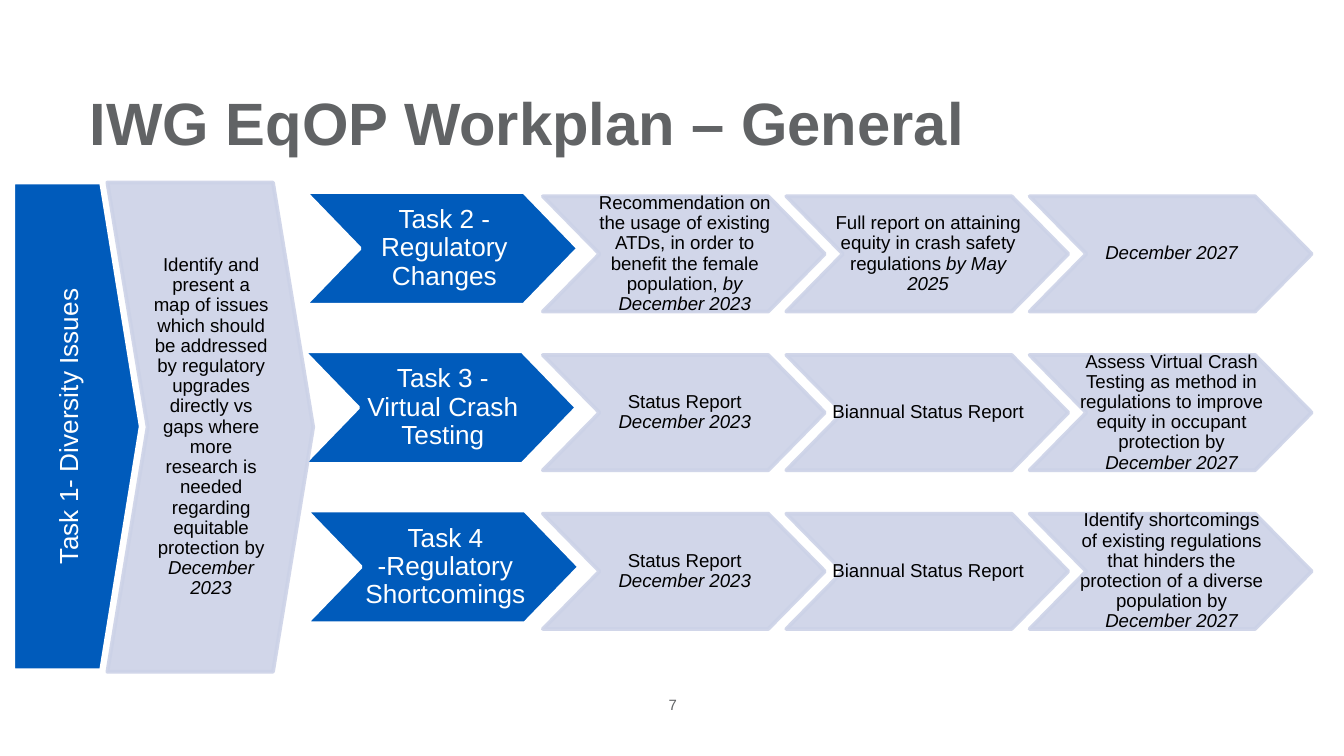
from lxml import etree
from pptx import Presentation
from pptx.dml.color import RGBColor
from pptx.enum.shapes import MSO_SHAPE
from pptx.enum.text import MSO_ANCHOR, PP_ALIGN
from pptx.oxml.ns import qn
from pptx.util import Cm, Pt

BLUE = RGBColor(0x00, 0x5B, 0xBB)
LAVENDER = RGBColor(0xCC, 0xD2, 0xE7)
GREY = RGBColor(0x61, 0x63, 0x65)
WHITE = RGBColor(0xFF, 0xFF, 0xFF)
BLACK = RGBColor(0x00, 0x00, 0x00)
PENTAGON = MSO_SHAPE.PENTAGON
MIDDLE = MSO_ANCHOR.MIDDLE
CENTER = PP_ALIGN.CENTER
LEFT = PP_ALIGN.LEFT

TASK_INSETS = (1.07, 0.05, 0.97, 0.05)
STEP_INSETS = (0.84, 0, 0.81, 0)


def write_text(box, text, italic_text="", size=10, color=BLACK, bold=False,
               align=CENTER, spacing=0.9, insets=STEP_INSETS):
    frame = box.text_frame
    frame.word_wrap = True
    frame.vertical_anchor = MIDDLE
    (frame.margin_left, frame.margin_top,
     frame.margin_right, frame.margin_bottom) = [Cm(inset) for inset in insets]
    para = frame.paragraphs[0]
    para.alignment = align
    para.line_spacing = spacing
    for part, italic in ((text, False), (italic_text, True)):
        if part:
            span = para.add_run()
            span.text = part
            span.font.name = "Arial"
            span.font.size = Pt(size)
            span.font.color.rgb = color
            span.font.bold = bold
            span.font.italic = italic


def add_chevron(left, top, width, height, notch, fill, line, opacity=100):
    right, bottom, middle = left + width, top + height, top + height / 2
    points = [(left, top), (right - notch, top), (right, middle),
              (right - notch, bottom), (left, bottom), (left + notch, middle)]
    points = [(Cm(x), Cm(y)) for x, y in points]
    builder = page.shapes.build_freeform(*points[0])
    builder.add_line_segments(points[1:], close=True)
    chevron = builder.convert_to_shape()
    chevron.shadow.inherit = False
    chevron.fill.solid()
    chevron.fill.fore_color.rgb = fill
    chevron.line.color.rgb = line
    chevron.line.width = Pt(2)
    if opacity < 100:
        for color in chevron._element.spPr.iter(qn("a:srgbClr")):
            etree.SubElement(color, qn("a:alpha"), val=str(opacity * 1000))
    return chevron


deck = Presentation()
deck.slide_width, deck.slide_height = Cm(25.4), Cm(14.29)
page = deck.slides.add_slide(deck.slide_layouts[6])

# Task 1 arrow with upward text
task_one = page.shapes.add_shape(PENTAGON, Cm(0.25), Cm(3.45), Cm(2.41), Cm(9.22))
task_one.adjustments[0] = 0.31
task_one.shadow.inherit = False
task_one.fill.solid()
task_one.fill.fore_color.rgb = BLUE
task_one.line.color.rgb = WHITE
task_one.line.width = Pt(2)
write_text(task_one, "Task 1- Diversity Issues", size=14, color=WHITE,
           insets=TASK_INSETS)
task_one.text_frame._txBody.bodyPr.set("vert", "vert270")

# Page number and title
number = page.shapes.add_textbox(Cm(10.9), Cm(13.13), Cm(3.63), Cm(0.36))
write_text(number, "7", size=8, color=GREY, spacing=1, insets=(0, 0, 0, 0))
title = page.shapes.add_textbox(Cm(1.45), Cm(1.52), Cm(22.53), Cm(1.55))
write_text(title, "IWG EqOP Workplan – General", size=32, color=GREY, bold=True,
           align=LEFT, spacing=1, insets=(0.25, 0.13, 0.25, 0.13))

# Task chevrons
tasks = [
    (5.77, "Task 2 - Regulatory Changes"),
    (5.74, "Task 3 - Virtual Crash Testing"),
    (5.79, "Task 4 -Regulatory Shortcomings"),
]
for row, (left, text) in enumerate(tasks):
    task = add_chevron(left, 3.63 + 3.01 * row, 5.16, 2.13, 1.03, BLUE, WHITE)
    write_text(task, text, size=14, color=WHITE, insets=TASK_INSETS)

# Step chevrons, one row per task
steps = [
    [("Recommendation on the usage of existing ATDs, in order to benefit "
      "the female population, ", "by December 2023"),
     ("Full report on attaining equity in crash safety regulations ",
      "by May 2025"),
     ("", "December 2027")],
    [("Status Report ", "December 2023"),
     ("Biannual Status Report ", ""),
     ("Assess Virtual Crash Testing as method in regulations to improve "
      "equity in occupant protection by ", "December 2027")],
    [("Status Report ", "December 2023"),
     ("Biannual Status Report ", ""),
     ("Identify shortcomings of existing regulations that hinders the "
      "protection of a diverse population by ", "December 2027")],
]
for row, row_steps in enumerate(steps):
    for column, (text, date) in enumerate(row_steps):
        step = add_chevron(10.26 + 4.6 * column, 3.71 + 3 * row, 5.33, 2.18, 1.07,
                           LAVENDER, LAVENDER, opacity=90)
        write_text(step, text, date)

# Task 1 step
issues = add_chevron(2.03, 3.45, 3.89, 9.25, 0.76, LAVENDER, LAVENDER, opacity=90)
write_text(issues, "Identify and present a map of issues which should be addressed "
           "by regulatory upgrades directly vs gaps where more research is needed "
           "regarding equitable protection by ", "December 2023")

deck.save("out.pptx")
